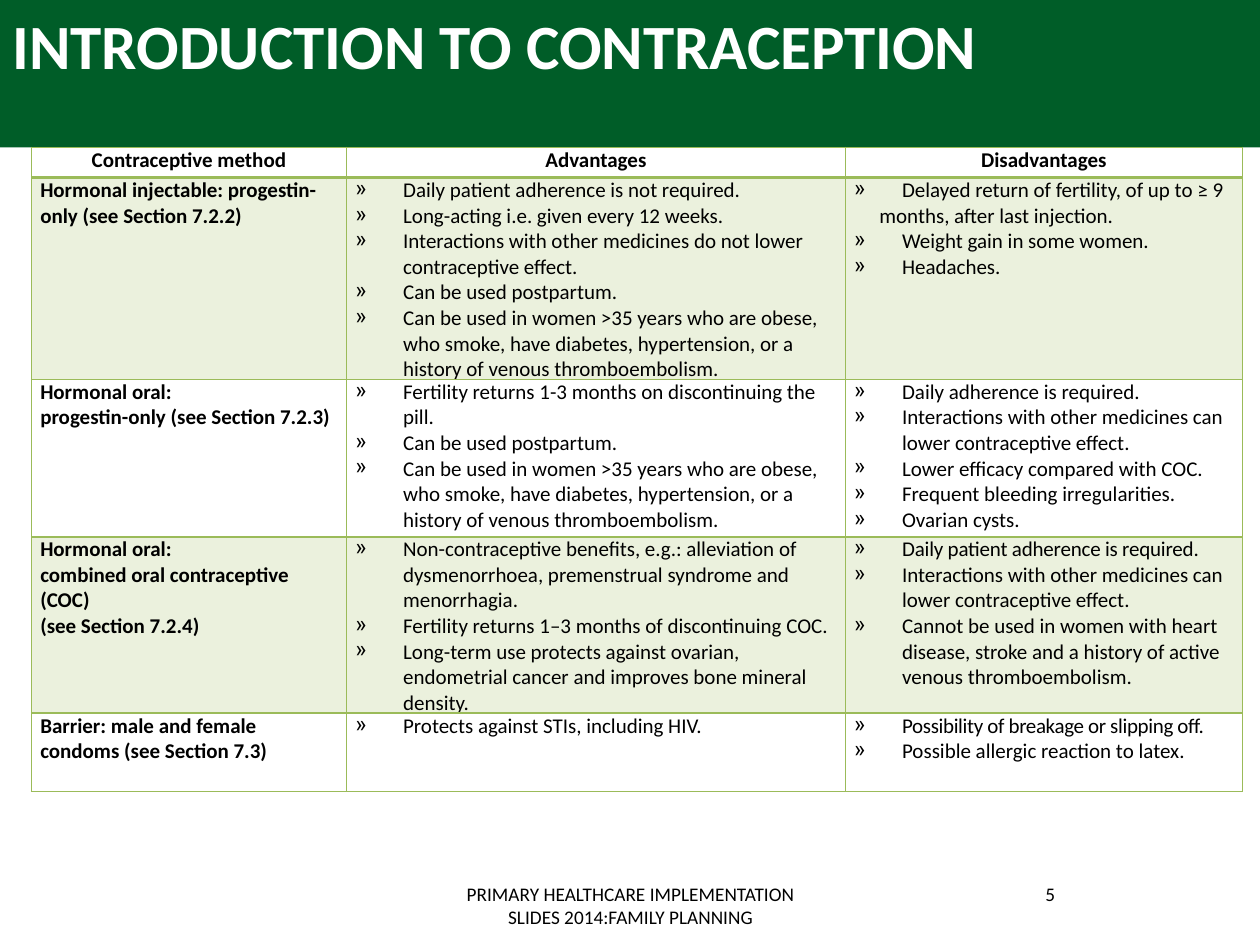
from lxml.etree import SubElement
from pptx import Presentation
from pptx.dml.color import RGBColor
from pptx.enum.shapes import MSO_SHAPE
from pptx.enum.text import MSO_ANCHOR, PP_ALIGN
from pptx.oxml.ns import qn
from pptx.util import Inches, Pt

HEADERS = ["Contraceptive method", "Advantages", "Disadvantages"]
COL_WIDTHS = [2.5, 3.96, 3.15]
ROW_HEIGHTS = [0.24, 1.59, 1.25, 1.25, 0.62]
OLDER_WOMEN = ("Can be used in women >35 years who are obese, who smoke, have diabetes, "
               "hypertension, or a history of venous thromboembolism.")
INTERACTIONS = "Interactions with other medicines can lower contraceptive effect."
METHODS = [
    (["Hormonal injectable: progestin-only (see Section 7.2.2)"],
     ["Daily patient adherence is not required.",
      "Long-acting i.e. given every 12 weeks.",
      "Interactions with other medicines do not lower contraceptive effect.",
      "Can be used postpartum.",
      OLDER_WOMEN],
     ["Delayed return of fertility, of up to ≥ 9",
      "months, after last injection.",
      "Weight gain in some women.",
      "Headaches."]),
    (["Hormonal oral:", "progestin-only (see Section 7.2.3)"],
     ["Fertility returns 1-3 months on discontinuing the pill.",
      "Can be used postpartum.",
      OLDER_WOMEN],
     ["Daily adherence is required.",
      INTERACTIONS,
      "Lower efficacy compared with COC.",
      "Frequent bleeding irregularities.",
      "Ovarian cysts."]),
    (["Hormonal oral:", "combined oral contraceptive (COC)", "(see Section 7.2.4)"],
     ["Non-contraceptive benefits, e.g.: alleviation of dysmenorrhoea, "
      "premenstrual syndrome and menorrhagia.",
      "Fertility returns 1–3 months of discontinuing COC.",
      "Long-term use protects against ovarian, endometrial cancer and improves "
      "bone mineral density."],
     ["Daily patient adherence is required.",
      INTERACTIONS,
      "Cannot be used in women with heart disease, stroke and a history of active "
      "venous thromboembolism."]),
    (["Barrier: male and female condoms (see Section 7.3)"],
     ["Protects against STIs, including HIV."],
     ["Possibility of breakage or slipping off.",
      "Possible allergic reaction to latex."]),
]
# Paragraphs whose format differs from the rest of their cell
EXCEPTIONS = {
    "months, after last injection.": dict(bullet=None, indent=0.2),
    "Daily patient adherence is required.": dict(spacing=-0.1),
    "Possibility of breakage or slipping off.": dict(spacing=-0.2),
}


def rgb(value):
    return RGBColor.from_string(value)


def write(tf, lines, size=12, color="000000", bold=False, align=PP_ALIGN.LEFT,
          bullet=None, indent=0, spacing=0):
    """Write one paragraph per line, applying the format of EXCEPTIONS."""
    tf.word_wrap = True
    for i, line in enumerate(lines):
        fmt = dict(bullet=bullet, indent=indent, spacing=spacing)
        fmt.update(EXCEPTIONS.get(line, {}))
        p = tf.paragraphs[0] if i == 0 else tf.add_paragraph()
        p.alignment = align
        pPr = p._p.get_or_add_pPr()
        pPr.set("marL", str(Inches(fmt["indent"])))
        if fmt["bullet"]:
            pPr.set("indent", str(-Inches(fmt["indent"])))
            SubElement(pPr, qn("a:buChar")).set("char", fmt["bullet"])
        r = p.add_run()
        r.text = line
        r.font.name = Style.font
        r.font.size = Pt(size)
        r.font.bold = bold
        r.font.color.rgb = rgb(color)
        if fmt["spacing"]:
            r._r.get_or_add_rPr().set("spc", str(round(fmt["spacing"] * 100)))


class Style:
    font = "Calibri"
    banner = "005D28"
    accent = "9BBB59"

    def __init__(self, slide):
        self.s = slide

    def rect(self, x, y, w, h, color):
        sp = self.s.shapes.add_shape(MSO_SHAPE.RECTANGLE, Inches(x), Inches(y),
                                     Inches(w), Inches(h))
        sp.shadow.inherit = False
        sp.fill.solid()
        sp.fill.fore_color.rgb = rgb(color)
        sp.line.fill.background()

    def text(self, x, y, w, h, line, **fmt):
        sp = self.s.shapes.add_textbox(Inches(x), Inches(y), Inches(w), Inches(h))
        write(sp.text_frame, [line], **fmt)

    def cell(self, cell, lines, margin=0.07, bottom=1, tinted=False, **fmt):
        cell.margin_left = cell.margin_right = Inches(margin)
        cell.margin_top = cell.margin_bottom = 0
        cell.vertical_anchor = MSO_ANCHOR.TOP
        write(cell.text_frame, lines, **fmt)
        tcPr = cell._tc.get_or_add_tcPr()
        for side, width in zip("LRTB", (1, 1, 1, bottom)):
            ln = SubElement(tcPr, qn("a:ln" + side), w=str(Pt(width)))
            fill = SubElement(ln, qn("a:solidFill"))
            SubElement(fill, qn("a:srgbClr"), val=self.accent)
        if tinted:
            cell.fill.solid()
            cell.fill.fore_color.rgb = rgb(self.accent)
            clr = tcPr.find(qn("a:solidFill")).find(qn("a:srgbClr"))
            SubElement(clr, qn("a:alpha"), val="20000")
        else:
            cell.fill.background()

    def table(self, x, y, headers, rows, widths, heights):
        table = self.s.shapes.add_table(len(heights), len(widths), Inches(x), Inches(y),
                                        Inches(sum(widths)), Inches(sum(heights))).table
        table.first_row = table.horz_banding = False
        for column, width in zip(table.columns, widths):
            column.width = Inches(width)
        for row, height in zip(table.rows, heights):
            row.height = Inches(height)
        for c, header in enumerate(headers):
            self.cell(table.cell(0, c), [header], margin=0.04, bottom=2,
                      bold=True, align=PP_ALIGN.CENTER)
        for r, row in enumerate(rows, 1):
            for c, lines in enumerate(row):
                fmt = dict(bullet="»", indent=0.38) if c else dict(bold=True)
                self.cell(table.cell(r, c), lines, tinted=r % 2 == 1, **fmt)


def main():
    prs = Presentation()
    prs.slide_width, prs.slide_height = Inches(10), Inches(7.5)
    page = Style(prs.slides.add_slide(prs.slide_layouts[6]))
    page.rect(0, 0, 10, 1.17, Style.banner)
    page.text(0, 0, 9, 1.25, "INTRODUCTION TO CONTRACEPTION",
              size=36, color="FFFFFF", bold=True)
    page.table(0.25, 1.17, HEADERS, METHODS, COL_WIDTHS, ROW_HEIGHTS)
    footer = dict(size=11, align=PP_ALIGN.CENTER)
    page.text(3.42, 6.95, 3.17, 0.4,
              "PRIMARY HEALTHCARE IMPLEMENTATION SLIDES 2014:FAMILY PLANNING", **footer)
    page.text(7.17, 6.95, 2.33, 0.4, "5", **footer)
    prs.save("out.pptx")


if __name__ == "__main__":
    main()
